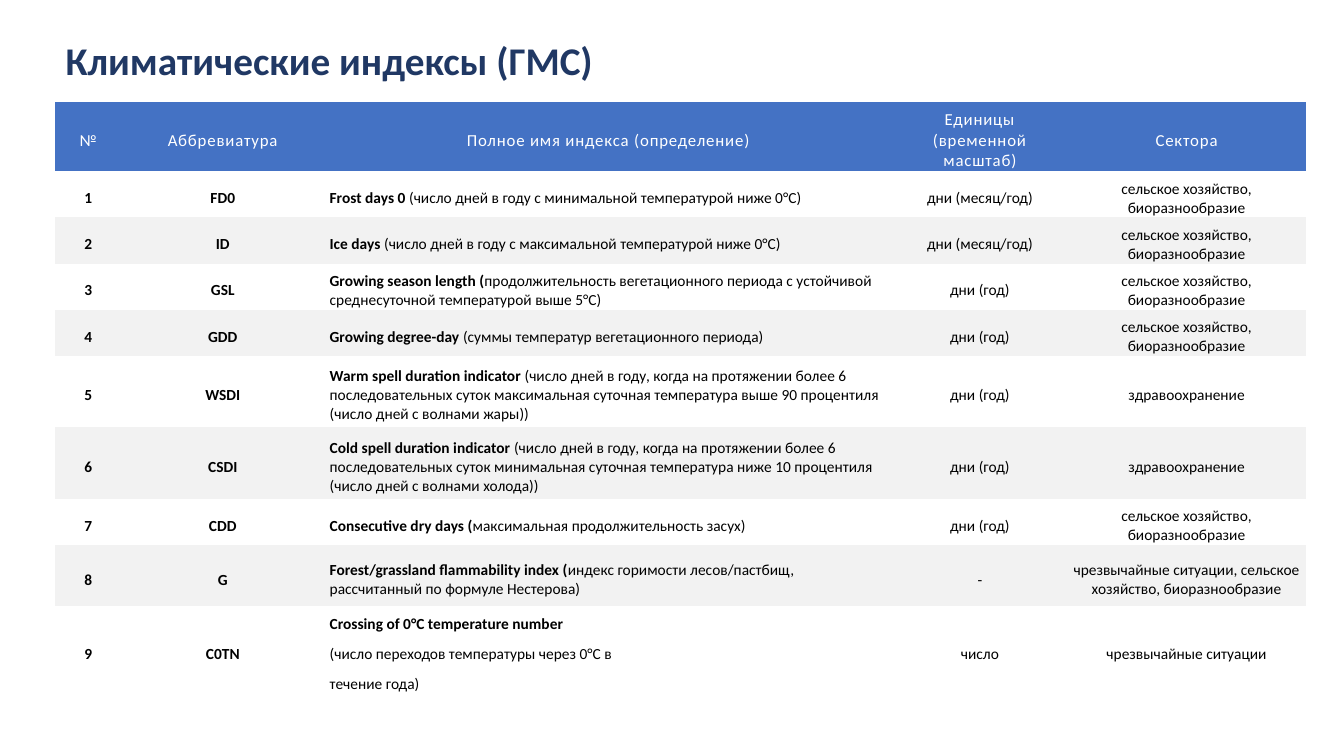
"""Build a slide with a table of climate indices."""
from pptx import Presentation
from pptx.dml.color import RGBColor
from pptx.enum.text import MSO_ANCHOR, PP_ALIGN
from pptx.util import Inches, Pt

MIDDLE = MSO_ANCHOR.MIDDLE
CENTER, LEFT = PP_ALIGN.CENTER, PP_ALIGN.LEFT
NAVY = RGBColor(0x20, 0x38, 0x64)
BLUE = RGBColor(0x44, 0x72, 0xC4)
GRAY = RGBColor(0xF2, 0xF2, 0xF2)
WHITE = RGBColor(0xFF, 0xFF, 0xFF)
BLACK = RGBColor(0x00, 0x00, 0x00)
FONT = "Calibri"
PLAIN_STYLE = "{2D5ABB26-0587-4C30-8999-92F81FD0307C}"

COL_WIDTHS = [0.65, 2.02, 5.63, 1.74, 2.36]
ROW_HEIGHTS = [0.69, 0.45, 0.45, 0.45, 0.45, 0.71, 0.71, 0.45, 0.61, 0.82]
HEADERS = ["№", "Аббревиатура", "Полное имя индекса (определение)",
           "Единицы (временной масштаб)", "Сектора"]
FARMING = "сельское хозяйство, биоразнообразие"
HEALTH = "здравоохранение"
MONTHLY = "дни (месяц/год)"
YEARLY = "дни (год)"
INDICES = [
    ("FD0", "Frost days 0",
     " (число дней в году с минимальной температурой ниже 0°C)", MONTHLY, FARMING),
    ("ID", "Ice days ",
     "(число дней в году с максимальной температурой ниже 0°C)", MONTHLY, FARMING),
    ("GSL", "Growing season length (",
     "продолжительность вегетационного периода с устойчивой "
     "среднесуточной температурой выше 5°C)", YEARLY, FARMING),
    ("GDD", "Growing degree-day ",
     "(суммы температур вегетационного периода)", YEARLY, FARMING),
    ("WSDI", "Warm spell duration indicator ",
     "(число дней в году, когда на протяжении более 6 последовательных суток "
     "максимальная суточная температура выше 90 процентиля "
     "(число дней с волнами жары))", YEARLY, HEALTH),
    ("CSDI", "Cold spell duration indicator ",
     "(число дней в году, когда на протяжении более 6 последовательных суток "
     "минимальная суточная температура ниже 10 процентиля "
     "(число дней с волнами холода))", YEARLY, HEALTH),
    ("CDD", "Consecutive dry days (",
     "максимальная продолжительность засух)", YEARLY, FARMING),
    ("G", "Forest/grassland flammability index (",
     "индекс горимости лесов/пастбищ, рассчитанный по формуле Нестерова)",
     "-", "чрезвычайные ситуации, сельское хозяйство, биоразнообразие"),
    ("С0TN", "Crossing of 0°C temperature number",
     "\n(число переходов температуры через 0°С в\nтечение года)",
     "число", "чрезвычайные ситуации"),
]


def set_title(s, text):
    """Place and format the title."""
    title = s.shapes.title
    title.left, title.top = Inches(0.55), Inches(-0.1)
    title.width, title.height = Inches(11.5), Inches(1.45)
    tf = title.text_frame
    tf.text = text
    tf.vertical_anchor = MIDDLE
    p = tf.paragraphs[0]
    p.alignment = LEFT
    p.line_spacing = 0.9
    p.font.name, p.font.size, p.font.bold = FONT, Pt(28), True
    p.font.color.rgb = NAVY


def format_cell(cell, fill):
    """Set the margins, anchor and fill of a cell."""
    cell.margin_left = cell.margin_right = Inches(0.05)
    cell.margin_top, cell.margin_bottom = Inches(0.08), 0
    cell.vertical_anchor = MIDDLE
    if fill is None:
        cell.fill.background()
    else:
        cell.fill.solid()
        cell.fill.fore_color.rgb = fill


def format_paragraph(p, size, color, align=CENTER):
    """Set the alignment, spacing and font of a paragraph."""
    p.alignment = align
    p.space_after = Pt(8)
    p.font.name, p.font.size = FONT, Pt(size)
    p.font.color.rgb = color


def fill_header(cell, text):
    """Write a header cell with widely spaced letters."""
    format_cell(cell, BLUE)
    cell.text = text
    p = cell.text_frame.paragraphs[0]
    format_paragraph(p, 12, WHITE)
    p.runs[0].font._element.set("spc", "60")


def fill_text(cell, text, fill, bold):
    """Write a centred body cell."""
    format_cell(cell, fill)
    cell.text = text
    p = cell.text_frame.paragraphs[0]
    format_paragraph(p, 11, BLACK)
    p.font.bold = bold


def fill_definition(cell, name, definition, fill):
    """Write a bold index name followed by its definition."""
    format_cell(cell, fill)
    tf = cell.text_frame
    p = tf.paragraphs[0]
    r = p.add_run()
    r.text, r.font.bold = name, True
    first, *others = definition.split("\n")
    if first:
        p.add_run().text = first
    for line in others:
        tf.add_paragraph().text = line
    for p in tf.paragraphs:
        format_paragraph(p, 11, BLACK, LEFT)


def add_index_table(s):
    """Add the table of indices."""
    frame = s.shapes.add_table(len(ROW_HEIGHTS), len(COL_WIDTHS), Inches(0.55),
                               Inches(1.01), Inches(12.4), Inches(5.81))
    table = frame.table
    table.horz_banding = False
    table._tbl.tblPr[0].text = PLAIN_STYLE
    for column, width in zip(table.columns, COL_WIDTHS):
        column.width = Inches(width)
    for row, height in zip(table.rows, ROW_HEIGHTS):
        row.height = Inches(height)
    for col, text in enumerate(HEADERS):
        fill_header(table.cell(0, col), text)
    for row, (code, name, definition, units, sectors) in enumerate(INDICES, 1):
        fill = None if row % 2 else GRAY
        fill_text(table.cell(row, 0), str(row), fill, True)
        fill_text(table.cell(row, 1), code, fill, True)
        fill_definition(table.cell(row, 2), name, definition, fill)
        fill_text(table.cell(row, 3), units, fill, False)
        fill_text(table.cell(row, 4), sectors, fill, False)


def main():
    """Build and save the presentation."""
    prs = Presentation()
    prs.slide_width, prs.slide_height = Inches(13.33), Inches(7.5)
    s = prs.slides.add_slide(prs.slide_layouts[5])
    set_title(s, "Климатические индексы (ГМС)")
    add_index_table(s)
    prs.save("out.pptx")


if __name__ == "__main__":
    main()
